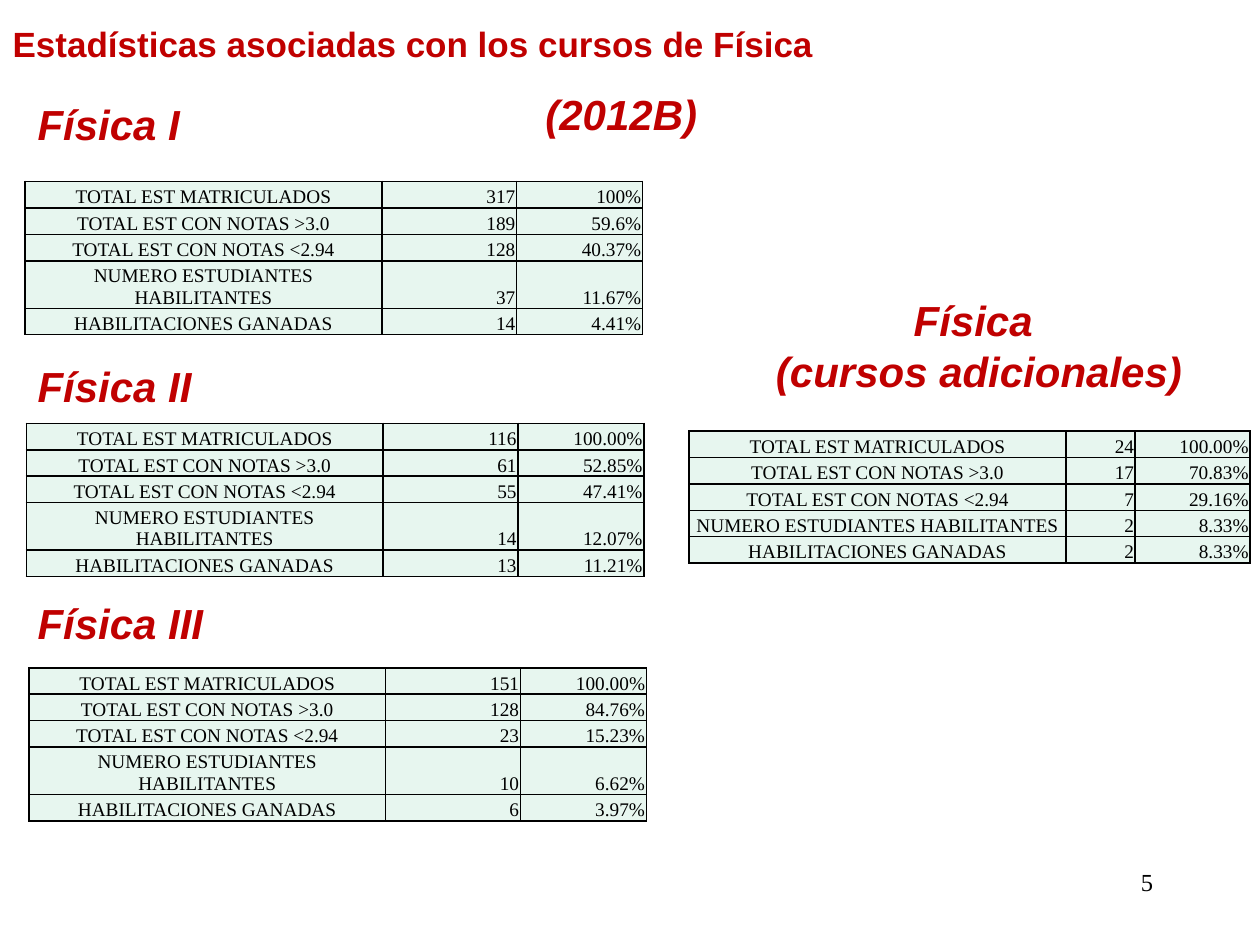
from lxml import etree
from pptx import Presentation
from pptx import util as u
from pptx.dml.color import RGBColor
from pptx.enum import text as t
from pptx.oxml import ns

COLORS = {"heading": "C00000", "ink": "000000", "cell": "E7F6EF", "border": "000000"}
MEASURES = [
    "TOTAL EST MATRICULADOS",
    "TOTAL EST CON NOTAS >3.0",
    "TOTAL EST CON NOTAS <2.94",
    "NUMERO ESTUDIANTES HABILITANTES",
    "HABILITACIONES GANADAS",
]
ROW_HEIGHT = 0.21
HABILITANTES_ROW = 3
WIDE_COLUMNS = (2.83, 1.07, 1)
NARROW_COLUMNS = (2.99, 0.55, 0.91)
COURSES = [
    {"heading": "Física I", "heading_box": (0.2, 0.73, 1.34, 0.5),
     "origin": (0.2, 1.44), "columns": WIDE_COLUMNS, "tall_row": 0.35,
     "counts": (317, 189, 128, 37, 14),
     "shares": ("100%", "59.6%", "40.37%", "11.67%", "4.41%")},
    {"heading": "Física II", "heading_box": (0.2, 2.81, 1.43, 0.5),
     "origin": (0.21, 3.36), "columns": WIDE_COLUMNS, "tall_row": 0.37,
     "counts": (116, 61, 55, 14, 13),
     "shares": ("100.00%", "52.85%", "47.41%", "12.07%", "11.21%")},
    {"heading": "Física III", "heading_box": (0.2, 4.69, 1.53, 0.5),
     "origin": (0.23, 5.3), "columns": WIDE_COLUMNS, "tall_row": 0.37,
     "counts": (151, 128, 23, 10, 6),
     "shares": ("100.00%", "84.76%", "15.23%", "6.62%", "3.97%")},
    {"heading": "Física \n(cursos adicionales)", "heading_box": (6.02, 2.29, 3.5, 0.91),
     "align": "CENTER", "wrap": True,
     "origin": (5.47, 3.42), "columns": NARROW_COLUMNS, "tall_row": ROW_HEIGHT,
     "counts": (24, 17, 7, 2, 2),
     "shares": ("100.00%", "70.83%", "29.16%", "8.33%", "8.33%")},
]


def write_text(frame, content, size=11, font="Times New Roman", color="ink",
               bold=False, italic=False, align="LEFT"):
    """Fill a text frame, one paragraph per line, with a single format."""
    frame.text = content
    for paragraph in frame.paragraphs:
        paragraph.alignment = t.PP_ALIGN[align]
        for run in paragraph.runs:
            run.font.size = u.Pt(size)
            run.font.name = font
            run.font.bold = bold
            run.font.italic = italic
            run.font.color.rgb = RGBColor.from_string(COLORS[color])


def add_label(slide, box, content, wrap=True, **text_format):
    """Place a text box on the slide."""
    frame = slide.shapes.add_textbox(*map(u.Inches, box)).text_frame
    frame.word_wrap = wrap
    write_text(frame, content, **text_format)


def add_heading(slide, box, content, wrap=False, align="LEFT"):
    """Place a red italic heading."""
    add_label(slide, box, content, wrap=wrap, align=align, size=24,
              font="Arial", color="heading", bold=True, italic=True)


def place_title(slide, box, content):
    """Move and format the title placeholder."""
    title = slide.shapes.title
    title.left, title.top, title.width, title.height = map(u.Inches, box)
    frame = title.text_frame
    frame.word_wrap = True
    frame.auto_size = t.MSO_AUTO_SIZE.NONE
    frame.vertical_anchor = t.MSO_ANCHOR.TOP
    write_text(frame, content, size=20, font="Arial", color="heading", bold=True)


def format_cell(cell):
    """Give a cell its fill, margins, anchor and four thin borders."""
    cell.margin_left = cell.margin_right = cell.margin_top = u.Inches(0.01)
    cell.margin_bottom = 0
    cell.vertical_anchor = t.MSO_ANCHOR.BOTTOM
    properties = cell._tc.get_or_add_tcPr()
    for side in ("lnL", "lnR", "lnT", "lnB"):
        border = etree.SubElement(properties, ns.qn(f"a:{side}"), w=str(u.Pt(1)))
        fill = etree.SubElement(border, ns.qn("a:solidFill"))
        etree.SubElement(fill, ns.qn("a:srgbClr"), val=COLORS["border"])
    cell.fill.solid()
    cell.fill.fore_color.rgb = RGBColor.from_string(COLORS["cell"])


def add_statistics(slide, origin, columns, tall_row, counts, shares):
    """Place the table of counts and percentages of one course."""
    heights = [ROW_HEIGHT] * len(MEASURES)
    heights[HABILITANTES_ROW] = tall_row
    box = (*origin, sum(columns), sum(heights))
    table = slide.shapes.add_table(
        len(heights), len(columns), *map(u.Inches, box)).table
    table.first_row = table.horz_banding = False
    for column, width in zip(table.columns, columns):
        column.width = u.Inches(width)
    for row, height, values in zip(table.rows, heights, zip(MEASURES, counts, shares)):
        row.height = u.Inches(height)
        for cell, value, align in zip(row.cells, values, ("CENTER", "RIGHT", "RIGHT")):
            format_cell(cell)
            write_text(cell.text_frame, str(value), align=align)


def add_course(slide, heading, heading_box, align="LEFT", wrap=False, **statistics):
    """Place one course: its heading and its table."""
    add_statistics(slide, **statistics)
    add_heading(slide, heading_box, heading, wrap=wrap, align=align)


def main():
    """Build the slide and save it."""
    deck = Presentation()
    deck.slide_width, deck.slide_height = u.Inches(10), u.Inches(7.5)
    slide = deck.slides.add_slide(deck.slide_layouts[5])
    place_title(slide, (0, 0.13, 6.75, 0.44),
                "Estadísticas asociadas con los cursos de Física")
    add_heading(slide, (4.23, 0.65, 1.51, 0.5), "(2012B)")
    for course in COURSES:
        add_course(slide, **course)
    add_label(slide, (7.17, 6.83, 2.08, 0.5), "5", size=14, align="RIGHT")
    deck.save("out.pptx")


if __name__ == "__main__":
    main()
